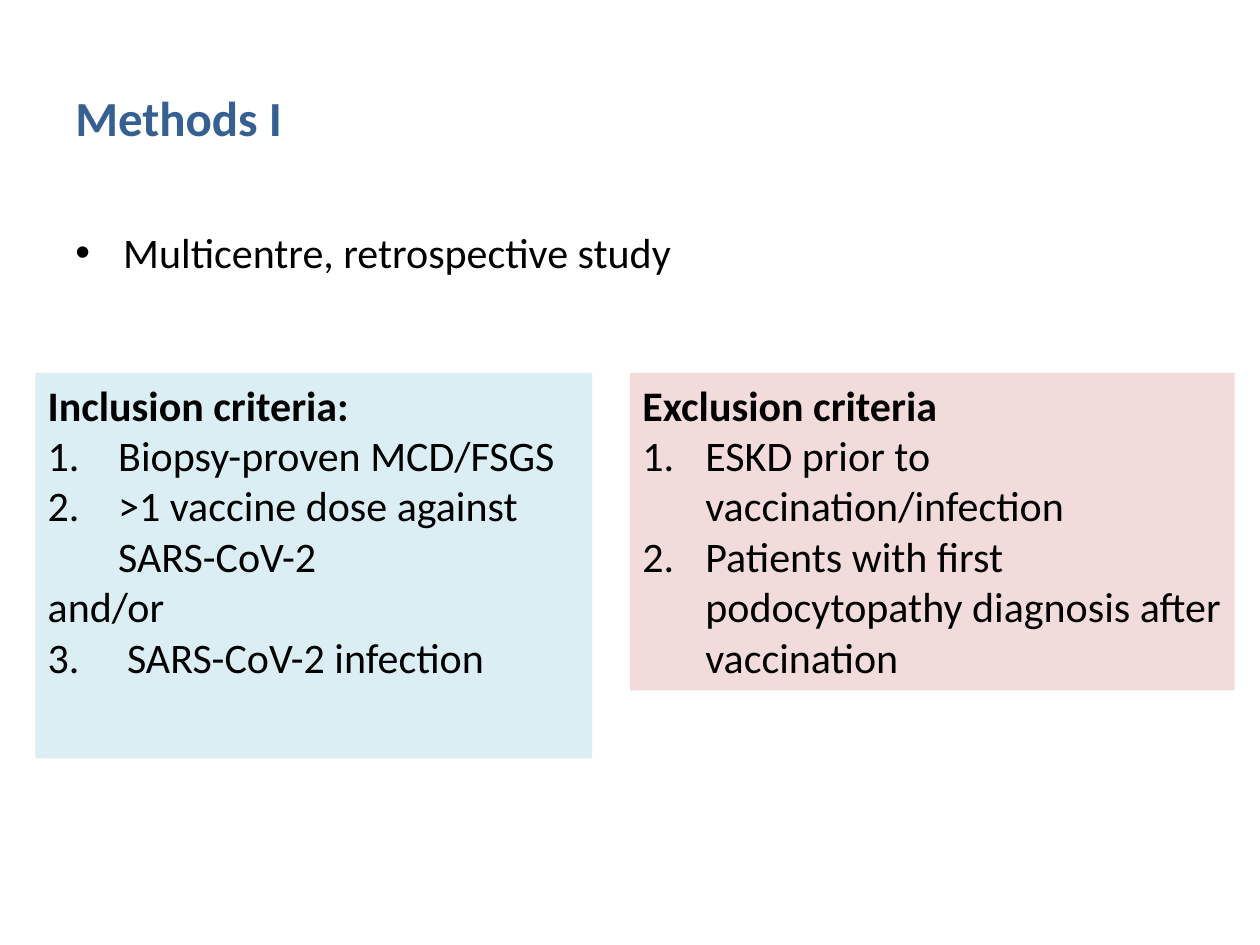
from lxml.etree import SubElement
from pptx import Presentation
from pptx.dml.color import RGBColor
from pptx.enum.shapes import MSO_SHAPE as SHAPE
from pptx.enum.text import MSO_ANCHOR as ANCHOR, PP_ALIGN as ALIGN
from pptx.oxml.ns import qn
from pptx.util import Inches, Pt

FONT, BLACK, BLUE = "Calibri", "000000", "376092"
CRITERIA_TOP = 2.96

# Content: each criterion is (number, text, hanging indent)
TITLE = "Methods I"
STUDY = "Multicentre, retrospective study"
CRITERIA = [
    {"heading": "Inclusion criteria:", "fill": "DBEEF4",
     "left": 0.28, "width": 4.42, "height": 3.06,
     "items": [(1, "Biopsy-proven MCD/FSGS", 0.56),
               (2, ">1 vaccine dose against SARS-CoV-2", 0.56),
               (None, "and/or", 0),
               (3, "SARS-CoV-2 infection", 0.63)]},
    {"heading": "Exclusion criteria", "fill": "F2DCDB",
     "left": 5, "width": 4.8, "height": 2.52,
     "items": [(1, "ESKD prior to vaccination/infection", 0.5),
               (2, "Patients with first podocytopathy diagnosis after vaccination", 0.5)]},
]


def rgb(color):
    return RGBColor.from_string(color)


def write(paragraph, text, size=24, color=BLACK, bold=False):
    paragraph.text = text
    paragraph.alignment = ALIGN.LEFT
    font = paragraph.font
    font.name, font.size, font.bold = FONT, Pt(size), bold
    font.color.rgb = rgb(color)


def hang(paragraph, indent, tag, **marker):
    """Give the paragraph a hanging indent and a bullet or number."""
    props = paragraph._p.get_or_add_pPr()
    props.set("marL", str(Inches(indent)))
    props.set("indent", str(-Inches(indent)))
    typeface = "Arial" if tag == "a:buChar" else FONT
    bullet_font = SubElement(props, qn("a:buFont"), typeface=typeface)
    bullet_font.addnext(SubElement(props, qn(tag), **marker))


def add_text_box(left, top, width, height):
    frame = slide.shapes.add_textbox(
        Inches(left), Inches(top), Inches(width), Inches(height)).text_frame
    frame.word_wrap = True
    return frame


prs = Presentation()
prs.slide_width, prs.slide_height = Inches(10), Inches(7.5)
slide = prs.slides.add_slide(prs.slide_layouts[6])

# Title
title = add_text_box(0.5, 0.3, 9, 1.25)
title.vertical_anchor = ANCHOR.MIDDLE
write(title.paragraphs[0], TITLE, 28, BLUE, True)

# Study design
study = add_text_box(0.5, 1.75, 9, 4.95).paragraphs[0]
write(study, STUDY)
hang(study, 0.38, "a:buChar", char="•")

# Criteria panels
for criteria in CRITERIA:
    panel = slide.shapes.add_shape(
        SHAPE.RECTANGLE, Inches(criteria["left"]), Inches(CRITERIA_TOP),
        Inches(criteria["width"]), Inches(criteria["height"]))
    panel.shadow.inherit = False
    panel.fill.solid()
    panel.fill.fore_color.rgb = rgb(criteria["fill"])
    panel.line.fill.background()
    frame = panel.text_frame
    frame.word_wrap = True
    frame.vertical_anchor = ANCHOR.TOP
    write(frame.paragraphs[0], criteria["heading"], bold=True)
    for number, text, indent in criteria["items"]:
        item = frame.add_paragraph()
        write(item, text)
        if number:
            hang(item, indent, "a:buAutoNum", type="arabicPeriod", startAt=str(number))

prs.save("out.pptx")
